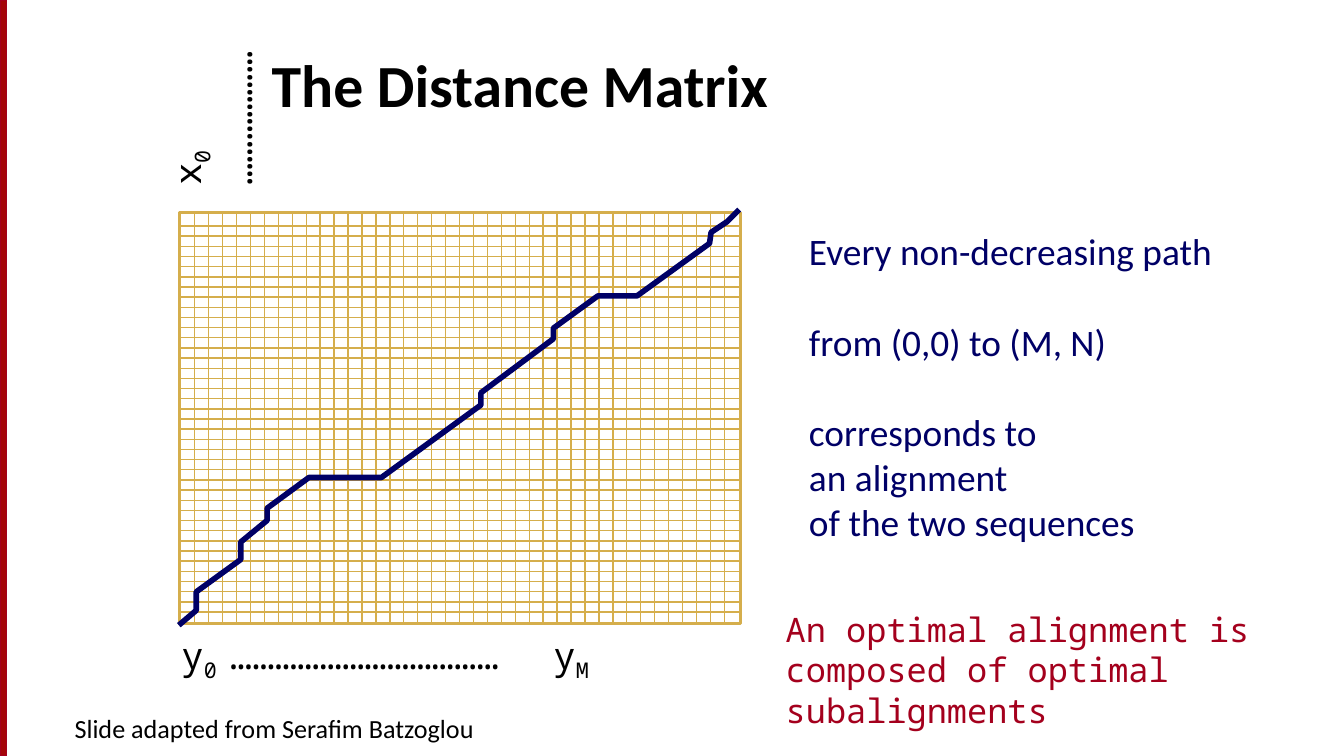
from lxml.etree import SubElement
from pptx import Presentation
from pptx.dml.color import RGBColor
from pptx.enum.shapes import MSO_CONNECTOR, MSO_SHAPE
from pptx.enum.text import MSO_ANCHOR, PP_ALIGN
from pptx.oxml.ns import qn
from pptx.util import Cm, Pt

COLORS = {"text": "000000", "navy": "000066", "red": "A4001D",
          "bar": "A40508", "grid": "D5AE4C"}
SANS, MONO = "Calibri", "Noto Sans Mono"

# Lengths are centimetres; boxes are left, top, width, height.
SLIDE = (25.4, 14.28)
BAR = (0, 0, 0.13, 14.28)
MATRIX = (3.4, 4.01, 10.59, 7.77)
INNER_LINES = 39
ROW_SPAN = (4.27, 11.56)
COLUMN_SPAN = (3.68, 13.69)
ALIGNMENT_PATH = [
    (13.97, 3.96), (13.74, 4.19), (13.44, 4.39), (13.41, 4.6), (13.16, 4.78),
    (12.04, 5.59), (11.3, 5.59), (10.46, 6.2), (10.46, 6.4), (9.09, 7.42),
    (9.09, 7.65), (7.21, 9.02), (5.84, 9.02), (5.05, 9.6), (5.05, 9.83),
    (4.55, 10.24), (4.55, 10.57), (3.71, 11.18), (3.71, 11.53), (3.38, 11.81),
]

TITLE = "The Distance Matrix"
CREDIT = "Slide adapted from Serafim Batzoglou"
OPTIMAL = "An optimal alignment is composed of optimal subalignments"
# Text and the space before it in points
STATEMENT = [("Every non-decreasing path", 0), ("from (0,0) to (M, N)", 24.4),
             ("corresponds to", 24.4), ("an alignment", 0),
             ("of the two sequences", 0)]
# Text and whether it is a subscript
Y_AXIS = [("y", False), ("0 ", True), ("…" * 12 + "\ty", False), ("M", True)]
X_AXIS = [("x", False), ("0 ", True), ("…" * 6, False)]
Y_END_TAB = 7.03


def rgb(name):
    return RGBColor.from_string(COLORS[name])


def add_run(p, text, font=SANS, size=20, color="text", bold=False, sub=False):
    r = p.add_run()
    r.text = text
    r.font.name, r.font.size, r.font.bold = font, Pt(size), bold
    r.font.color.rgb = rgb(color)
    if sub:
        r._r.get_or_add_rPr().set("baseline", "-25000")


def add_box(shapes, box):
    """Add a wrapping text box; return it with its first paragraph."""
    sp = shapes.add_textbox(*map(Cm, box))
    sp.text_frame.word_wrap = True
    return sp, sp.text_frame.paragraphs[0]


def add_axis(shapes, box, parts, rotation=0):
    sp, p = add_box(shapes, box)
    sp.rotation = rotation
    for text, sub in parts:
        add_run(p, text, font=MONO, sub=sub)
    return p


def add_tab_stop(p, position):
    tabs = SubElement(p._p.get_or_add_pPr(), qn("a:tabLst"))
    SubElement(tabs, qn("a:tab"), pos=str(Cm(position)), algn="l")


def add_grid_line(shapes, x1, y1, x2, y2):
    line = shapes.add_connector(MSO_CONNECTOR.STRAIGHT, *map(Cm, (x1, y1, x2, y2)))
    line.line.color.rgb = rgb("grid")
    line.line.width = Pt(0.75)
    SubElement(line._element.spPr, qn("a:effectLst"))


def style_outline(sp, color, width):
    sp.shadow.inherit = False
    sp.line.color.rgb = rgb(color)
    sp.line.width = Pt(width)


def spread(span, count):
    first, last = span
    return [first + (last - first) * i / (count - 1) for i in range(count)]


def add_matrix(shapes):
    left, top, width, height = MATRIX
    frame = shapes.add_shape(MSO_SHAPE.RECTANGLE, *map(Cm, MATRIX))
    frame.fill.background()
    style_outline(frame, "grid", 1.5)
    for y in spread(ROW_SPAN, INNER_LINES):
        add_grid_line(shapes, left, y, left + width, y)
    for x in spread(COLUMN_SPAN, INNER_LINES):
        add_grid_line(shapes, x, top + height, x, top)

    points = [(Cm(x), Cm(y)) for x, y in ALIGNMENT_PATH]
    builder = shapes.build_freeform(*points[0])
    builder.add_line_segments(points[1:], close=False)
    route = builder.convert_to_shape()
    route.fill.background()
    style_outline(route, "navy", 3)


def main():
    prs = Presentation()
    prs.slide_width, prs.slide_height = map(Cm, SLIDE)
    s = prs.slides.add_slide(prs.slide_layouts[5])
    shapes = s.shapes

    bar = shapes.add_shape(MSO_SHAPE.RECTANGLE, *map(Cm, BAR))
    bar.fill.solid()
    bar.fill.fore_color.rgb = rgb("bar")
    style_outline(bar, "red", 0.75)

    title = shapes.title
    title.left, title.top, title.width, title.height = map(Cm, (4.88, 0, 20.5, 2.39))
    title.text_frame.vertical_anchor = MSO_ANCHOR.BOTTOM
    p = title.text_frame.paragraphs[0]
    p.alignment = PP_ALIGN.LEFT
    add_run(p, TITLE, size=32, bold=True)

    _, p = add_box(shapes, (0.64, 13.34, 9.09, 0.94))
    p.alignment = PP_ALIGN.CENTER
    add_run(p, CREDIT, size=14)

    add_matrix(shapes)
    p = add_axis(shapes, (3.18, 11.81, 11.02, 1.12), Y_AXIS)
    add_tab_stop(p, Y_END_TAB)
    add_axis(shapes, (1.56, 1.23, 3.94, 1.12), X_AXIS, rotation=270)

    sp, p = add_box(shapes, (15.04, 4.19, 9.32, 7.26))
    for i, (text, gap) in enumerate(STATEMENT):
        if i:
            p = sp.text_frame.add_paragraph()
        p.space_before = Pt(gap)
        add_run(p, text, color="navy")

    _, p = add_box(shapes, (14.6, 11.38, 10.57, 2.5))
    add_run(p, OPTIMAL, font=MONO, size=18, color="red")

    prs.save("out.pptx")


if __name__ == "__main__":
    main()
